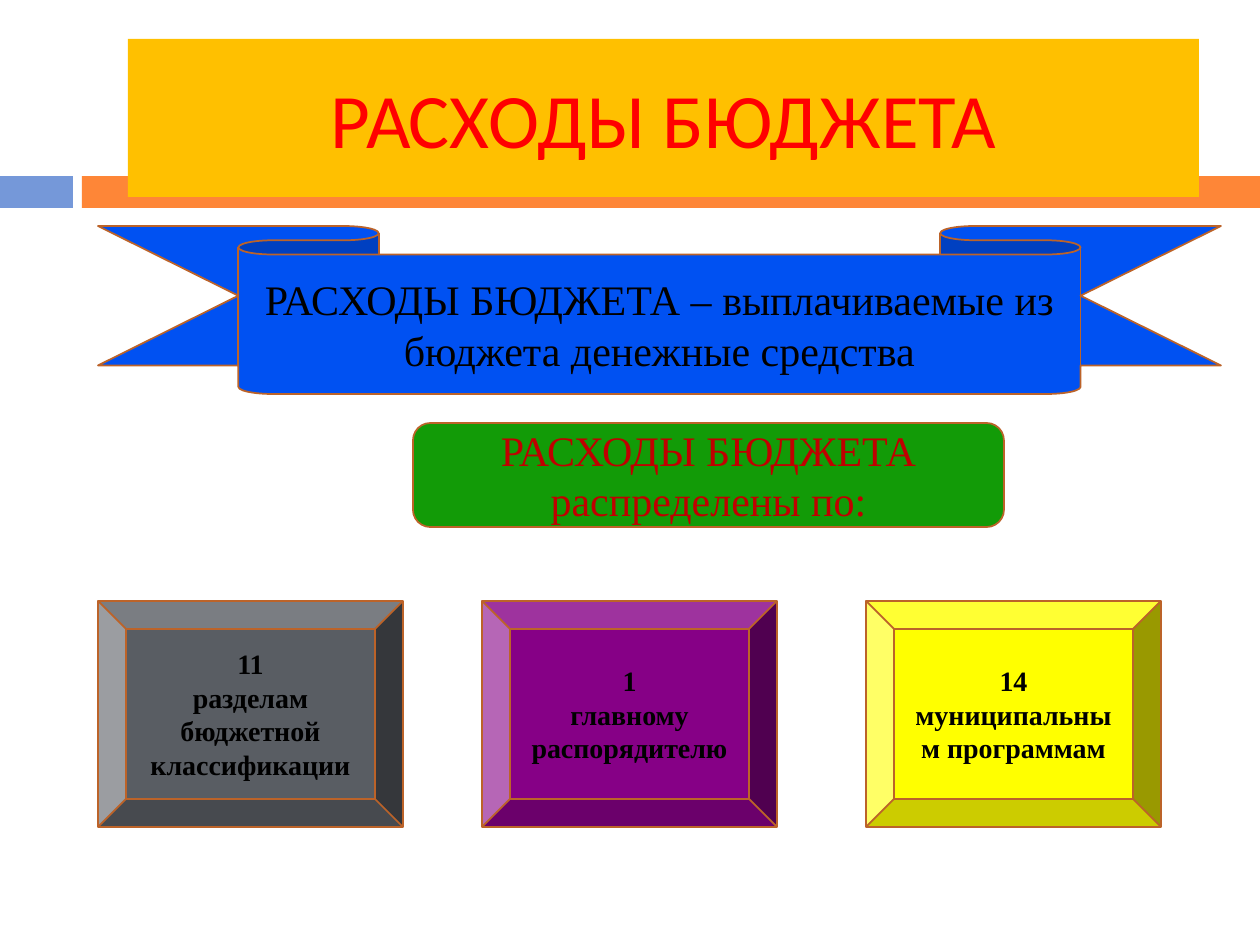
from pptx import Presentation
from pptx.dml.color import RGBColor
from pptx.enum.shapes import MSO_SHAPE
from pptx.enum.text import MSO_ANCHOR, MSO_AUTO_SIZE, PP_ALIGN
from pptx.util import Pt

RECT = MSO_SHAPE.RECTANGLE
RIBBON = MSO_SHAPE.DOWN_RIBBON
PILL = MSO_SHAPE.FLOWCHART_ALTERNATE_PROCESS
BEVEL = MSO_SHAPE.BEVEL
MIDDLE = MSO_ANCHOR.MIDDLE
NO_FIT = MSO_AUTO_SIZE.NONE
CENTER = PP_ALIGN.CENTER

PX = 914400 / 126
SERIF = "Times New Roman"
COLORS = {
    "sky": "7598D9", "orange": "FE8637", "gold": "FFC000", "red": "FF0000",
    "blue": "0051F2", "green": "129B07", "wine": "C00000", "gray": "595D63",
    "purple": "860086", "yellow": "FFFF00", "edge": "BC6329", "black": "000000",
}


def emu(*sizes):
    return [round(size * PX) for size in sizes]


def tint(name):
    return RGBColor.from_string(COLORS[name])


def paint(shape, fill):
    shape.fill.solid()
    shape.fill.fore_color.rgb = tint(fill)


def write(shape, lines, size, color, face=SERIF, bold=False):
    frame = shape.text_frame
    frame.word_wrap = True
    frame.auto_size = NO_FIT
    frame.vertical_anchor = MIDDLE
    frame.text = "\n".join(lines)
    for par in frame.paragraphs:
        par.alignment = CENTER
        font = par.font
        font.name, font.size, font.bold = face, Pt(size), bold
        font.color.rgb = tint(color)


def add_box(slide, kind, box, fill, edge=None):
    shape = slide.shapes.add_shape(kind, *emu(*box))
    shape.shadow.inherit = False
    paint(shape, fill)
    if edge:
        shape.line.color.rgb = tint(edge)
        shape.line.width = Pt(1)
    else:
        shape.line.fill.background()
    return shape


def add_band(slide, left, top, width, height):
    tab, gap = 73, 9
    start = tab + gap
    add_box(slide, RECT, (left, top, tab, height), "sky")
    add_box(slide, RECT, (left + start, top, width - start, height), "orange")


def add_title(slide, left, top, width, height):
    title = slide.shapes.title
    title.left, title.top, title.width, title.height = emu(left, top, width, height)
    paint(title, "gold")
    write(title, ["РАСХОДЫ БЮДЖЕТА"], 44, "red", "Calibri")
    # Bring the title in front of the band
    slide.shapes._spTree.append(title._element)


def add_ribbon(slide, *box):
    shape = add_box(slide, RIBBON, box, "blue", "edge")
    shape.adjustments[0] = 0.17
    shape.adjustments[1] = 0.75
    write(shape, ["РАСХОДЫ БЮДЖЕТА – выплачиваемые из бюджета денежные средства"],
          24, "black")


def add_pill(slide, *box):
    shape = add_box(slide, PILL, box, "green", "edge")
    write(shape, ["РАСХОДЫ БЮДЖЕТА распределены по:"], 24, "wine")


def add_cards(slide, left, top, step, height):
    cards = [
        (305, "gray", "11", "разделам бюджетной классификации"),
        (295, "purple", "1", "главному распорядителю"),
        (295, "yellow", "14", "муниципальным программам"),
    ]
    for i, (width, fill, count, label) in enumerate(cards):
        box = (left + i * step, top, width, height)
        shape = add_box(slide, BEVEL, box, fill, "edge")
        write(shape, [count, label], 16, "black", bold=True)


def main():
    deck = Presentation()
    deck.slide_width, deck.slide_height = emu(1260, 945)
    slide = deck.slides.add_slide(deck.slide_layouts[5])

    # Heading
    add_band(slide, 0, 176, 1260, 32)
    add_title(slide, 128, 39, 1071, 158)

    # Definition and lead-in
    add_ribbon(slide, 98, 226, 1123, 168)
    add_pill(slide, 413, 423, 591, 104)

    # Ways of splitting the spending
    add_cards(slide, 98, 601, 384, 226)

    deck.save("out.pptx")


if __name__ == "__main__":
    main()
